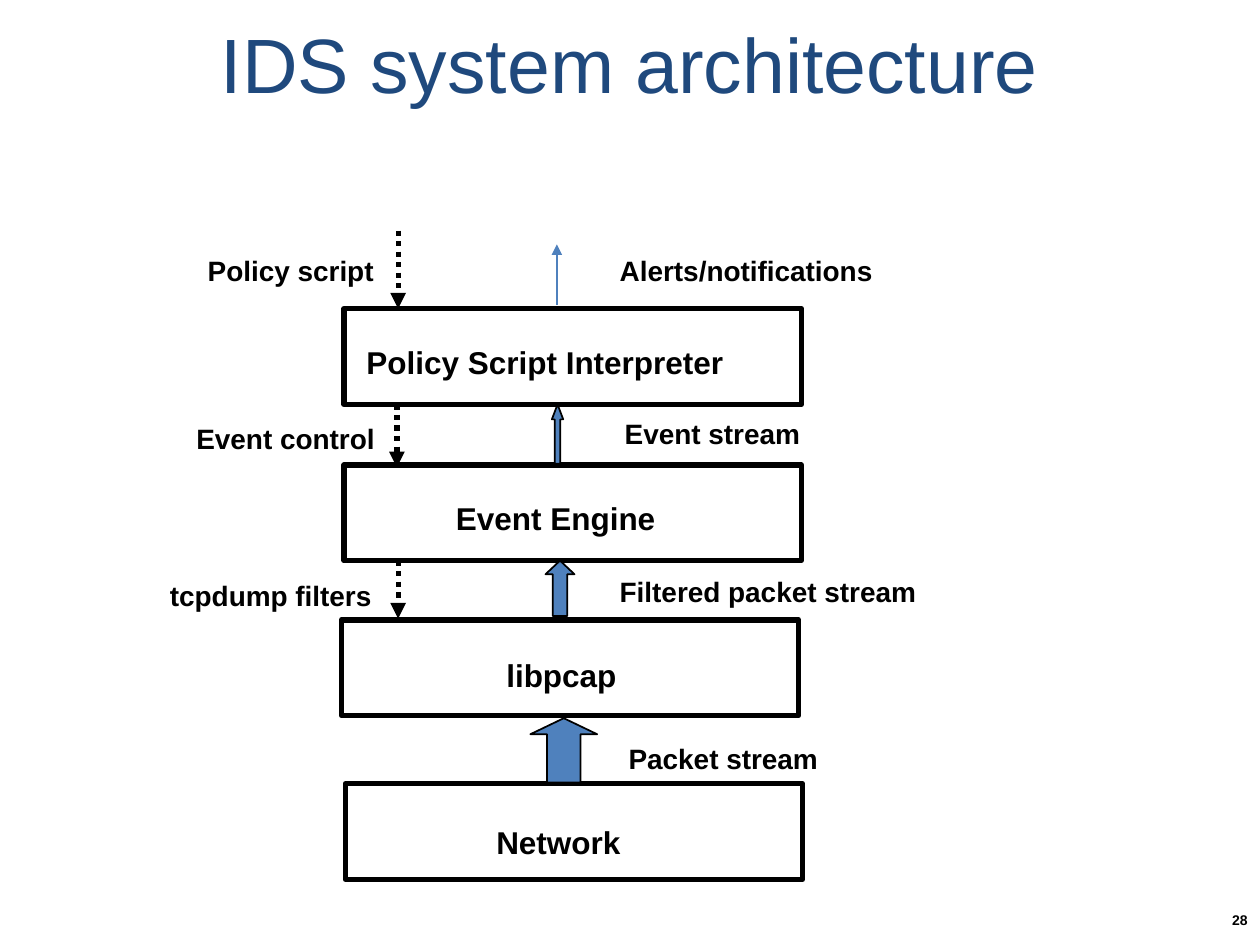
from lxml import etree
from pptx import Presentation
from pptx.dml.color import RGBColor
from pptx.enum.dml import MSO_LINE
from pptx.enum.shapes import MSO_CONNECTOR, MSO_SHAPE
from pptx.enum.text import MSO_ANCHOR, PP_ALIGN
from pptx.oxml.ns import qn
from pptx.util import Inches, Pt

FONT = "Arial"
COLORS = {"title": "1F497D", "ink": "000000", "flow": "4F81BD"}
BOX_W, BOX_H = 3.63, 0.76


def rgb(name):
    return RGBColor.from_string(COLORS[name])


def add_text(s, text, x, y, w, h, size, color="ink", bold=True,
             align=PP_ALIGN.LEFT, anchor=MSO_ANCHOR.TOP, wrap=False):
    tb = s.shapes.add_textbox(Inches(x), Inches(y), Inches(w), Inches(h))
    tf = tb.text_frame
    tf.word_wrap = wrap
    tf.vertical_anchor = anchor
    p = tf.paragraphs[0]
    p.alignment = align
    r = p.add_run()
    r.text = text
    r.font.name = FONT
    r.font.size = Pt(size)
    r.font.bold = bold
    r.font.color.rgb = rgb(color)


def add_outlined(s, kind, x, y, w, h, line_width, fill=None):
    sp = s.shapes.add_shape(kind, Inches(x), Inches(y), Inches(w), Inches(h))
    sp.shadow.inherit = False
    if fill:
        sp.fill.solid()
        sp.fill.fore_color.rgb = rgb(fill)
    else:
        sp.fill.background()
    sp.line.color.rgb = rgb("ink")
    sp.line.width = Pt(line_width)
    return sp


def add_layer(s, name, x, y, text_x, text_y, text_w):
    add_text(s, name, text_x, text_y, text_w, 0.4, 18)
    add_outlined(s, MSO_SHAPE.RECTANGLE, x, y, BOX_W, BOX_H, 3)


def add_block_arrow(s, x, y, w, h, head):
    sp = add_outlined(s, MSO_SHAPE.UP_ARROW, x, y, w, h, 1, "flow")
    sp.adjustments[0] = 0.5
    sp.adjustments[1] = head


def add_line_arrow(s, x, y1, y2, color, width, dash=None):
    cn = s.shapes.add_connector(MSO_CONNECTOR.STRAIGHT, Inches(x), Inches(y1),
                                Inches(x), Inches(y2))
    cn.line.color.rgb = rgb(color)
    cn.line.width = Pt(width)
    if dash:
        cn.line.dash_style = dash
    ln = cn.line._get_or_add_ln()
    etree.SubElement(ln, qn("a:tailEnd"), type="triangle")
    etree.SubElement(cn._element.spPr, qn("a:effectLst"))


def main():
    prs = Presentation()
    prs.slide_width, prs.slide_height = Inches(10), Inches(7.5)
    s = prs.slides.add_slide(prs.slide_layouts[6])

    # Title and slide number
    add_text(s, "IDS system architecture", 0.5, 0, 9, 1, 44, "title", False,
             PP_ALIGN.CENTER, MSO_ANCHOR.MIDDLE, True)
    add_text(s, "28", 9.31, 7.1, 0.69, 0.4, 8, align=PP_ALIGN.RIGHT,
             anchor=MSO_ANCHOR.MIDDLE, wrap=True)

    # Layers, bottom to top: name, box x and y, text x, y and width
    for layer in (("Network", 2.74, 6.22, 3.84, 6.48, 1.19),
                  ("libpcap", 2.71, 4.92, 3.92, 5.16, 1.08),
                  ("Event Engine", 2.73, 3.69, 3.52, 3.91, 1.79),
                  ("Policy Script Interpreter", 2.73, 2.45, 2.81, 2.67, 3.04)):
        add_layer(s, *layer)

    # Data flowing up, thinner at each layer
    for arrow in ((4.21, 5.7, 0.53, 0.51, 0.25),
                  (4.33, 4.45, 0.23, 0.44, 0.47),
                  (4.38, 3.21, 0.09, 0.47, 1.32)):
        add_block_arrow(s, *arrow)
    add_line_arrow(s, 4.42, 2.42, 1.94, "flow", 1)

    # Control flowing down
    for x, y1, y2 in ((3.16, 1.83, 2.45), (3.15, 3.21, 3.71),
                      (3.16, 4.45, 4.91)):
        add_line_arrow(s, x, y1, y2, "ink", 3, MSO_LINE.ROUND_DOT)

    # Flow labels
    for text, x, y, w in (("Packet stream", 4.89, 5.84, 1.71),
                          ("Filtered packet stream", 4.82, 4.51, 2.56),
                          ("Event stream", 4.86, 3.26, 1.6),
                          ("Alerts/notifications", 4.82, 1.96, 2.21),
                          ("Policy script", 1.55, 1.96, 1.52),
                          ("Event control", 1.46, 3.3, 1.62),
                          ("tcpdump filters", 1.25, 4.54, 1.81)):
        add_text(s, text, x, y, w, 0.37, 16)

    prs.save("out.pptx")


if __name__ == "__main__":
    main()
